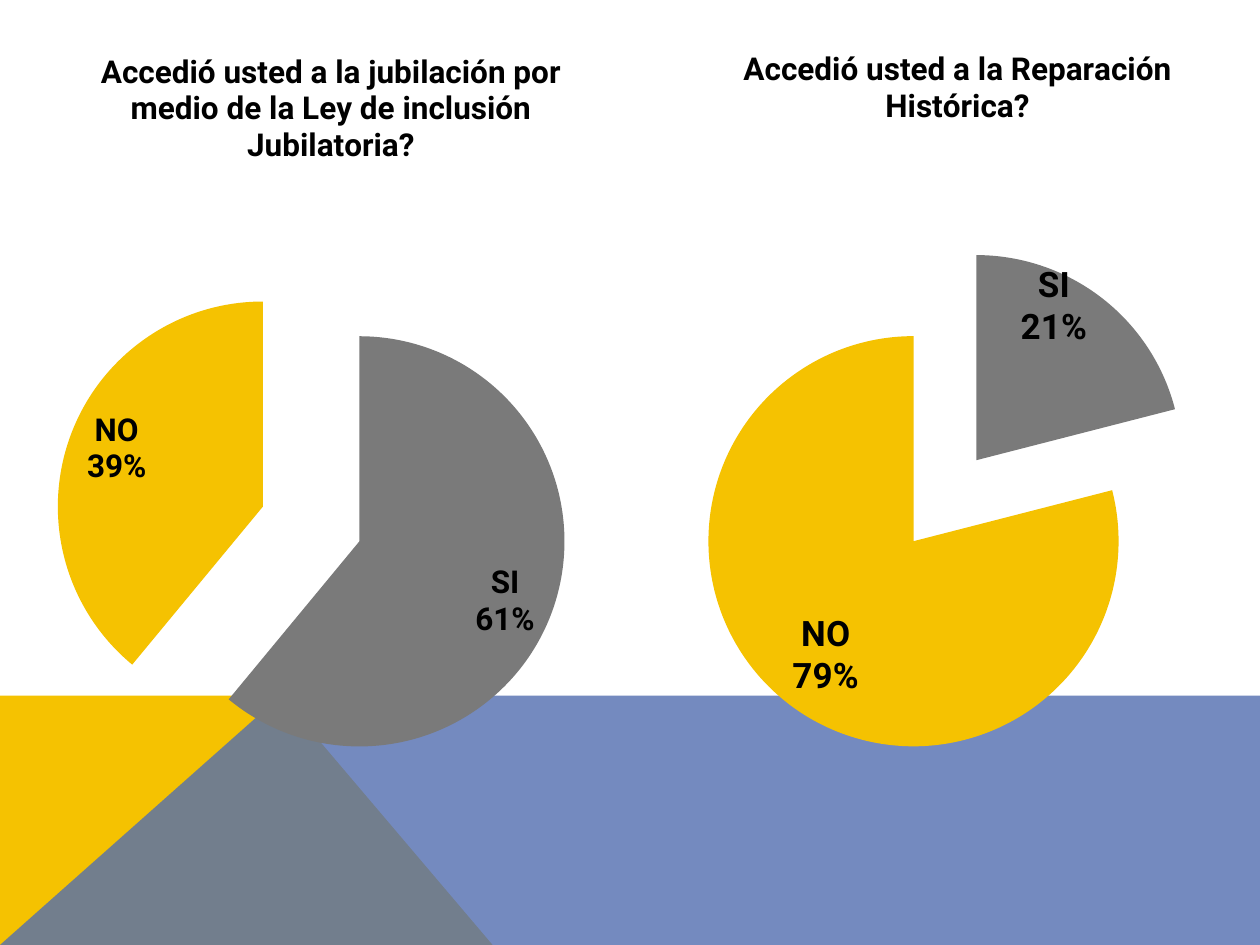
from lxml import etree
from pptx import Presentation
from pptx.chart.data import CategoryChartData
from pptx.dml.color import RGBColor
from pptx.enum.chart import XL_CHART_TYPE, XL_LABEL_POSITION
from pptx.oxml.ns import qn
from pptx.util import Inches, Pt

PIE = XL_CHART_TYPE.PIE
INSIDE_END = XL_LABEL_POSITION.INSIDE_END

THEME = {
    "font": "Roboto", "text": "000000", "gold": "F5C201", "gray": "7A7A7A",
    "blue": "526DB0", "base": 10, "title": 18,
}
W, H = 10, 7.5
HORIZON = 5.52
PEAK = 2.23
BACKDROP = [
    ("gold", 100, [(0, H), (0, HORIZON), (PEAK, HORIZON), (3.91, H)]),
    ("blue", 80, [(0, H), (PEAK, HORIZON), (W, HORIZON), (W, H)]),
]
CATEGORIES = ["SI", "NO"]
SLICES = ["gray", "gold"]
EXPLOSION = 25
CHARTS = [
    {
        "title": "Accedió usted a la jubilación por medio de la Ley de inclusión Jubilatoria?",
        "values": [61, 39], "label_size": 18, "top": 0.01,
        "title_pct": (15.1, 4.6), "plot_pct": (8.7, 19.4, 81.4, 72),
        "shift_pct": {0: (-1.7, 3.2), 1: (1.6, -2.9)},
    },
    {
        "title": "Accedió usted a la Reparación Histórica?",
        "values": [21, 79], "label_size": 20, "top": 0,
        "title_pct": (17.1, 4.5), "plot_pct": (9.3, 15.3, 81.4, 75.4),
        "shift_pct": {0: (-1.6, -4.2)},
    },
]


def color(name):
    return RGBColor.from_string(THEME[name])


def style(font, size, bold=False):
    font.name = THEME["font"]
    font.size = Pt(size)
    font.bold = bold
    font.color.rgb = color("text")


def set_layout(parent, index, percents, **modes):
    for old in parent.findall(qn("c:layout")):
        parent.remove(old)
    layout = etree.Element(qn("c:layout"))
    manual = etree.SubElement(layout, qn("c:manualLayout"))
    shares = [(tag, round(pct / 100, 4)) for tag, pct in zip("xywh", percents)]
    for tag, value in list(modes.items()) + shares:
        etree.SubElement(manual, qn(f"c:{tag}")).set("val", str(value))
    parent.insert(index, layout)


def split_lines(labels):
    sep = etree.Element(qn("c:separator"))
    sep.text = "\n"
    labels.find(qn("c:showBubbleSize")).addnext(sep)


def add_backdrop(slide, fill, opacity, points):
    pts = [(Inches(x), Inches(y)) for x, y in points]
    builder = slide.shapes.build_freeform(*pts[0])
    builder.add_line_segments(pts[1:], close=True)
    sp = builder.convert_to_shape()
    sp.shadow.inherit = False
    sp.line.fill.background()
    sp.fill.solid()
    sp.fill.fore_color.rgb = color(fill)
    if opacity < 100:
        clr = sp._element.spPr.find(".//" + qn("a:srgbClr"))
        etree.SubElement(clr, qn("a:alpha")).set("val", str(opacity * 1000))


def shift_label(point, offset, size):
    label = point.data_label
    style(label.font, size, True)
    label.position = INSIDE_END
    node = label._dLbl
    for tag, value in (("showVal", 0), ("showCatName", 1), ("showPercent", 1)):
        node.find(qn(f"c:{tag}")).set("val", str(value))
    split_lines(node)
    set_layout(node, 1, offset)


def add_pie(slide, column, item):
    data = CategoryChartData()
    data.categories = CATEGORIES
    data.add_series(item["title"], item["values"])
    width = W / len(CHARTS)
    chart = slide.shapes.add_chart(
        PIE, Inches(column * width), Inches(item["top"]),
        Inches(width), Inches(H - item["top"]), data).chart
    style(chart.font, THEME["base"])
    chart.has_legend = False

    chart.has_title = True
    title = chart.chart_title
    title.text_frame.text = item["title"]
    style(title.text_frame.paragraphs[0].runs[0].font, THEME["title"], True)
    set_layout(title._element, 1, item["title_pct"], xMode="edge", yMode="edge")
    plot_area = chart._chartSpace.chart.plotArea
    set_layout(plot_area, 0, item["plot_pct"], layoutTarget="inner", xMode="edge", yMode="edge")

    plot = chart.plots[0]
    plot.vary_by_categories = True
    series = plot.series[0]
    explosion = etree.Element(qn("c:explosion"), val=str(EXPLOSION))
    series._element.find(qn("c:tx")).addnext(explosion)
    for i, name in enumerate(SLICES):
        fill = series.points[i].format.fill
        fill.solid()
        fill.fore_color.rgb = color(name)

    labels = series.data_labels
    labels.show_value = False
    labels.show_category_name = True
    labels.show_percentage = True
    labels.position = INSIDE_END
    style(labels.font, item["label_size"], True)
    split_lines(labels._element)
    for i, offset in item["shift_pct"].items():
        shift_label(series.points[i], offset, item["label_size"])


def main():
    prs = Presentation()
    prs.slide_width, prs.slide_height = Inches(W), Inches(H)
    slide = prs.slides.add_slide(prs.slide_layouts[6])
    for shape in BACKDROP:
        add_backdrop(slide, *shape)
    for column, item in enumerate(CHARTS):
        add_pie(slide, column, item)
    prs.save("out.pptx")


if __name__ == "__main__":
    main()
